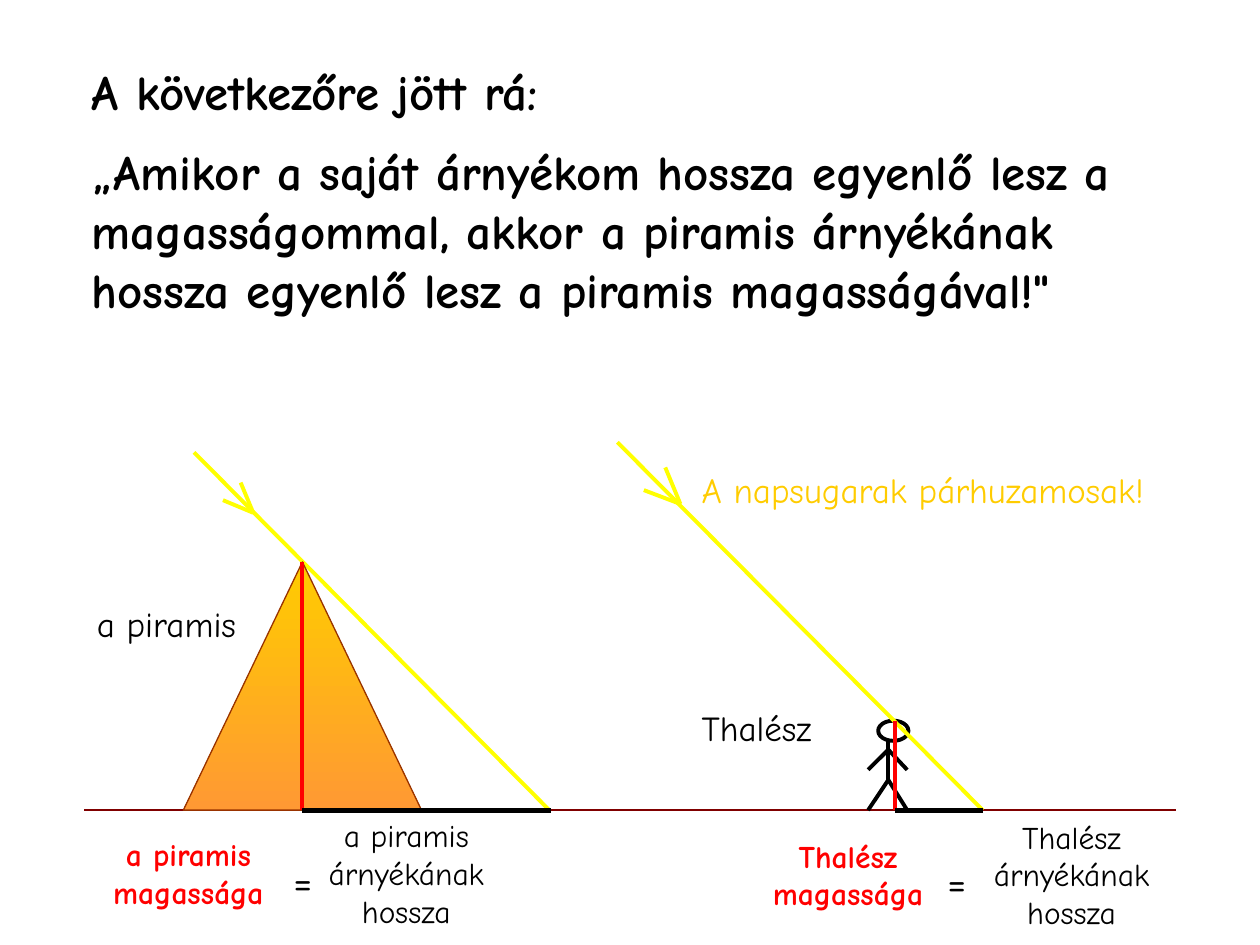
from lxml.etree import SubElement
from pptx import Presentation
from pptx.dml.color import RGBColor
from pptx.enum.shapes import MSO_CONNECTOR as Link, MSO_SHAPE as Form
from pptx.enum.text import PP_ALIGN as Align
from pptx.oxml.ns import qn
from pptx.util import Inches, Pt

deck = Presentation()
deck.slide_width, deck.slide_height = Inches(10), Inches(7.5)
slide = deck.slides.add_slide(deck.slide_layouts[6])
# The slide is a grid of 100 columns and 75 rows of square cells.
cell = deck.slide_width / 100
hue = RGBColor.from_string
BLACK, RED, SUN = "000000", "FF0000", "FFFF00"
LEFT, MID = Align.LEFT, Align.CENTER


def draw(home, ends, color, width=2.25):
    """Add a straight line to home, a slide or a group."""
    line = home.shapes.add_connector(Link.STRAIGHT, *[round(n * cell) for n in ends])
    line.line.color.rgb = hue(color)
    line.line.width = Pt(width)
    SubElement(line._element.spPr, qn("a:effectLst"))


def write(box, texts, size, color=BLACK, bold=False, align=LEFT):
    """Add a wrapped text box with one paragraph per text."""
    frame = slide.shapes.add_textbox(*[round(n * cell) for n in box]).text_frame
    frame.word_wrap = True
    for i, text in enumerate(texts):
        para = frame.add_paragraph() if i else frame.paragraphs[0]
        para.text = text
        para.alignment = align
        if i:
            para.space_before = Pt(12)
        font = para.font
        font.name, font.size, font.bold = "Comic Neue", Pt(size), bold
        font.color.rgb = hue(color)


write((6.3, 4.4, 86.2, 26.2), [
    "A következőre jött rá:",
    "„Amikor a saját árnyékom hossza egyenlő lesz a magasságommal, "
    "akkor a piramis árnyékának hossza egyenlő lesz a piramis magasságával!\"",
], 28, bold=True)

# Ground and the standing man
base = 64.3
draw(slide, (6.7, base, 93.3, base), "800000", 1)

man = slide.shapes.add_group_shape()
head = man.shapes.add_shape(Form.OVAL, *[round(n * cell) for n in (69.7, 57.2, 2.4, 1.6)])
head.shadow.inherit = False
head.fill.background()
head.line.color.rgb = hue(BLACK)
head.line.width = Pt(2.25)
spine, hip, neck = 70.5, 61.9, 59.5
draw(man, (spine, 58.8, spine, hip), BLACK)
for top, foot in ((hip, base), (neck, 61.1)):
    for side in (68.9, 72):
        draw(man, (spine, top, side, foot), BLACK)

# Sun rays, each with an open arrowhead
rays = (
    ((15.4, 35.9, 43.6, base), (20.1, 40.7), ((17.7, 39.7), (19.1, 38.3))),
    ((49, 35.1, 78, base), (54, 40), ((51.1, 38.9), (52.8, 37.1))),
)
for ray, tip, barbs in rays:
    draw(slide, ray, SUN)
    arrow = slide.shapes.add_group_shape()
    for barb in barbs:
        draw(arrow, barb + tip, SUN)

# Pyramid
peak, half = 24, 9.45
cone = slide.shapes.add_shape(
    Form.ISOSCELES_TRIANGLE,
    *[round(n * cell) for n in (peak - half, 44.6, 2 * half, base - 44.6)])
cone.shadow.inherit = False
cone.fill.gradient()
cone.fill.gradient_angle = 270
for stop, color in zip(cone.fill.gradient_stops, ("FFCC00", "FF9933")):
    stop.color.rgb = hue(color)
cone.line.color.rgb = hue("993300")
cone.line.width = Pt(0.75)

# Heights and the shadows they cast
for x, top, tail in ((peak, 44.6, 43.7), (71, 57.2, 78)):
    draw(slide, (x, top, x, base), RED)
    draw(slide, (tail, base, x, base), BLACK, 3)

# Names in the scene
for box, text, color in (
    ((6.7, 47.3, 14.6, 4.3), "a piramis", BLACK),
    ((54.7, 55.6, 13.4, 4.4), "Thalész", BLACK),
    ((54.7, 36.7, 39.4, 4.3), "A napsugarak párhuzamosak!", "FFCC00"),
):
    write(box, [text], 20, color)

# Height = shadow, below each figure
for name, tall, wide, sign, dark, top in (
    ("a piramis", 6.7, 16.5, 21.7, 24, 64.3),
    ("Thalész", 59.4, 15.8, 73.6, 76.8, 64.4),
):
    write((tall, top + 1.5, wide, 7.1), [f"{name} magassága"], 18, RED, True, MID)
    write((sign, top + 3, 4.7, 5), ["="], 24, align=MID)
    write((dark, top, 16.5, 10.1), [f"{name} árnyékának hossza"], 18, align=MID)

deck.save("out.pptx")
